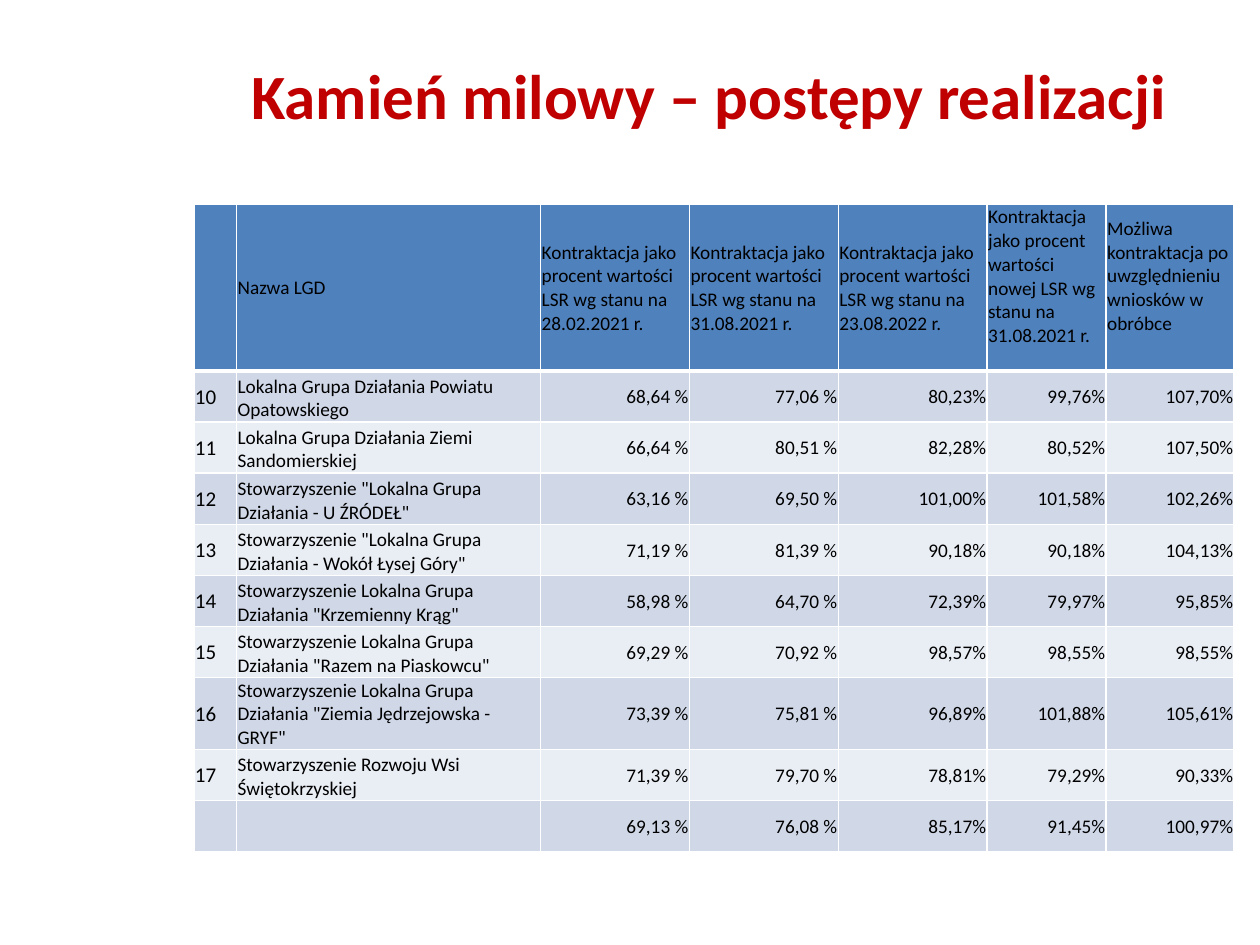
from dataclasses import dataclass

from lxml import etree
from pptx import Presentation
from pptx import util as u
from pptx.dml.color import RGBColor
from pptx.enum import text
from pptx.oxml.ns import qn


@dataclass(frozen=True)
class Theme:
    font: str = "Calibri"
    title_color: str = "C00000"
    text_color: str = "000000"
    header_fill: str = "4F81BD"
    band_fills: tuple[str, str] = ("D0D8E8", "E9EDF4")
    border_color: str = "FFFFFF"
    title_size: int = 36
    number_size: int = 12
    cell_size: int = 11
    border_width: int = 1
    header_rule: int = 3


@dataclass(frozen=True)
class Group:
    number: str
    name: str
    shares: tuple[str, ...]
    height: float = 1.03


@dataclass(frozen=True)
class CellStyle:
    fill: str
    size: int = 11
    align: text.PP_ALIGN = text.PP_ALIGN.LEFT
    anchor: text.MSO_ANCHOR = text.MSO_ANCHOR.MIDDLE
    bottom_margin: float = 0
    top_rule: int = 1
    bottom_rule: int = 1


THEME = Theme()
COLUMN_WIDTHS = (0.86, 6.13, 3, 3, 3, 2.4, 2.58)
HEADER_HEIGHT = 3.36
RAISED_HEADERS = (5, 6)

CONTRACTED = "Kontraktacja jako procent wartości"
HEADERS = (
    "",
    "Nazwa LGD",
    f"{CONTRACTED} LSR wg stanu na 28.02.2021 r.",
    f"{CONTRACTED} LSR wg stanu na 31.08.2021 r.",
    f"{CONTRACTED} LSR wg stanu na 23.08.2022 r.",
    f"{CONTRACTED} nowej LSR wg stanu na 31.08.2021 r.",
    "Możliwa kontraktacja po uwzględnieniu wniosków w obróbce",
)
GROUPS = (
    Group("10", "Lokalna Grupa Działania Powiatu Opatowskiego",
          ("68,64 %", "77,06 %", "80,23%", "99,76%", "107,70%")),
    Group("11", "Lokalna Grupa Działania Ziemi Sandomierskiej",
          ("66,64 %", "80,51 %", "82,28%", "80,52%", "107,50%")),
    Group("12", 'Stowarzyszenie "Lokalna Grupa Działania - U ŹRÓDEŁ"',
          ("63,16 %", "69,50 %", "101,00%", "101,58%", "102,26%")),
    Group("13", 'Stowarzyszenie "Lokalna Grupa Działania - Wokół Łysej Góry"',
          ("71,19 %", "81,39 %", "90,18%", "90,18%", "104,13%")),
    Group("14", 'Stowarzyszenie Lokalna Grupa Działania "Krzemienny Krąg"',
          ("58,98 %", "64,70 %", "72,39%", "79,97%", "95,85%")),
    Group("15", 'Stowarzyszenie Lokalna Grupa Działania "Razem na Piaskowcu"',
          ("69,29 %", "70,92 %", "98,57%", "98,55%", "98,55%")),
    Group("16", 'Stowarzyszenie Lokalna Grupa Działania "Ziemia Jędrzejowska - GRYF"',
          ("73,39 %", "75,81 %", "96,89%", "101,88%", "105,61%"), 1.45),
    Group("17", "Stowarzyszenie Rozwoju Wsi Świętokrzyskiej",
          ("71,39 %", "79,70 %", "78,81%", "79,29%", "90,33%")),
    Group("", "", ("69,13 %", "76,08 %", "85,17%", "91,45%", "100,97%")),
)


def add_run(paragraph, content: str, size: int, color: str, bold: bool = False) -> None:
    run = paragraph.add_run()
    run.text = content
    run.font.name = THEME.font
    run.font.size = u.Pt(size)
    run.font.bold = bold
    run.font.color.rgb = RGBColor.from_string(color)


def set_borders(cell, style: CellStyle) -> None:
    properties = cell._tc.get_or_add_tcPr()
    widths = {"a:lnL": THEME.border_width, "a:lnR": THEME.border_width,
              "a:lnT": style.top_rule, "a:lnB": style.bottom_rule}
    for position, (tag, width) in enumerate(widths.items()):
        line = etree.Element(qn(tag), w=str(u.Pt(width)))
        fill = etree.SubElement(line, qn("a:solidFill"))
        etree.SubElement(fill, qn("a:srgbClr"), val=THEME.border_color)
        properties.insert(position, line)


def fill_cell(cell, content: str, style: CellStyle) -> None:
    cell.fill.solid()
    cell.fill.fore_color.rgb = RGBColor.from_string(style.fill)
    set_borders(cell, style)
    cell.margin_left = cell.margin_right = cell.margin_top = u.Cm(0.02)
    cell.margin_bottom = u.Cm(style.bottom_margin)
    cell.vertical_anchor = style.anchor
    paragraph = cell.text_frame.paragraphs[0]
    paragraph.alignment = style.align
    if content:
        add_run(paragraph, content, style.size, THEME.text_color)


def add_title(slide) -> None:
    shape = slide.shapes.add_textbox(u.Cm(3.38), u.Cm(0.4), u.Cm(21.82), u.Cm(3))
    frame = shape.text_frame
    frame.word_wrap = True
    frame.vertical_anchor = text.MSO_ANCHOR.MIDDLE
    paragraph = frame.paragraphs[0]
    paragraph.alignment = text.PP_ALIGN.CENTER
    add_run(paragraph, "Kamień milowy – postępy realizacji",
            THEME.title_size, THEME.title_color, bold=True)


def fill_header(table) -> None:
    for index, header in enumerate(HEADERS):
        style = CellStyle(THEME.header_fill, THEME.cell_size,
                          bottom_margin=0.48 if index in RAISED_HEADERS else 0,
                          bottom_rule=THEME.header_rule)
        fill_cell(table.cell(0, index), header, style)


def fill_group(table, row: int, group: Group) -> None:
    fill = THEME.band_fills[(row - 1) % 2]
    top_rule = THEME.header_rule if row == 1 else THEME.border_width
    number = CellStyle(fill, THEME.number_size, top_rule=top_rule)
    name = CellStyle(fill, THEME.cell_size, anchor=text.MSO_ANCHOR.BOTTOM,
                     top_rule=top_rule)
    share = CellStyle(fill, THEME.cell_size, text.PP_ALIGN.RIGHT, top_rule=top_rule)
    fill_cell(table.cell(row, 0), group.number, number)
    fill_cell(table.cell(row, 1), group.name, name)
    for column, value in enumerate(group.shares, start=2):
        fill_cell(table.cell(row, column), value, share)


def add_progress_table(slide) -> None:
    heights = [HEADER_HEIGHT, *(group.height for group in GROUPS)]
    table = slide.shapes.add_table(
        len(heights), len(COLUMN_WIDTHS), u.Cm(3.91), u.Cm(4.12),
        u.Cm(sum(COLUMN_WIDTHS)), u.Cm(sum(heights))).table
    for column, width in zip(table.columns, COLUMN_WIDTHS):
        column.width = u.Cm(width)
    for row, height in zip(table.rows, heights):
        row.height = u.Cm(height)
    fill_header(table)
    for index, group in enumerate(GROUPS, start=1):
        fill_group(table, index, group)


def main() -> None:
    presentation = Presentation()
    presentation.slide_width = u.Cm(25.4)
    presentation.slide_height = u.Cm(19.05)
    slide = presentation.slides.add_slide(presentation.slide_layouts[6])
    # Heading
    add_title(slide)
    # Contracting progress by local action group
    add_progress_table(slide)
    presentation.save("out.pptx")


if __name__ == "__main__":
    main()
